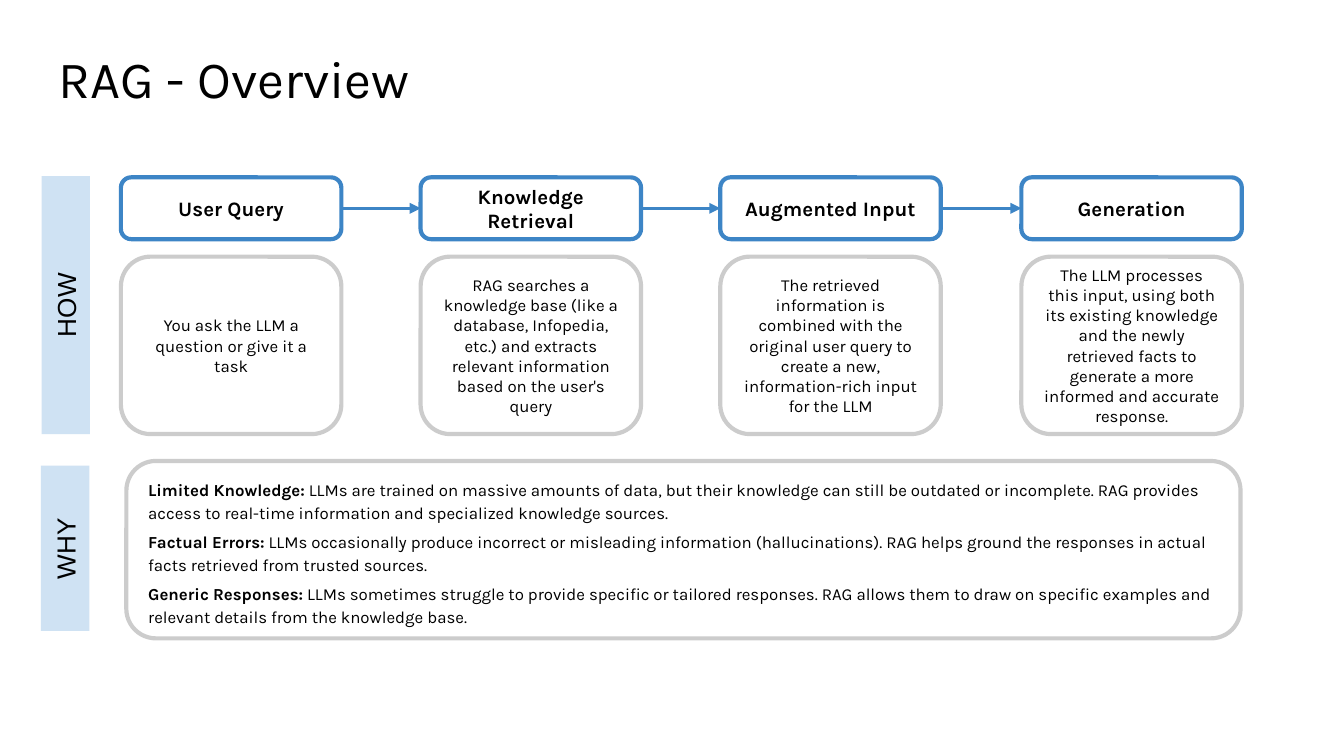
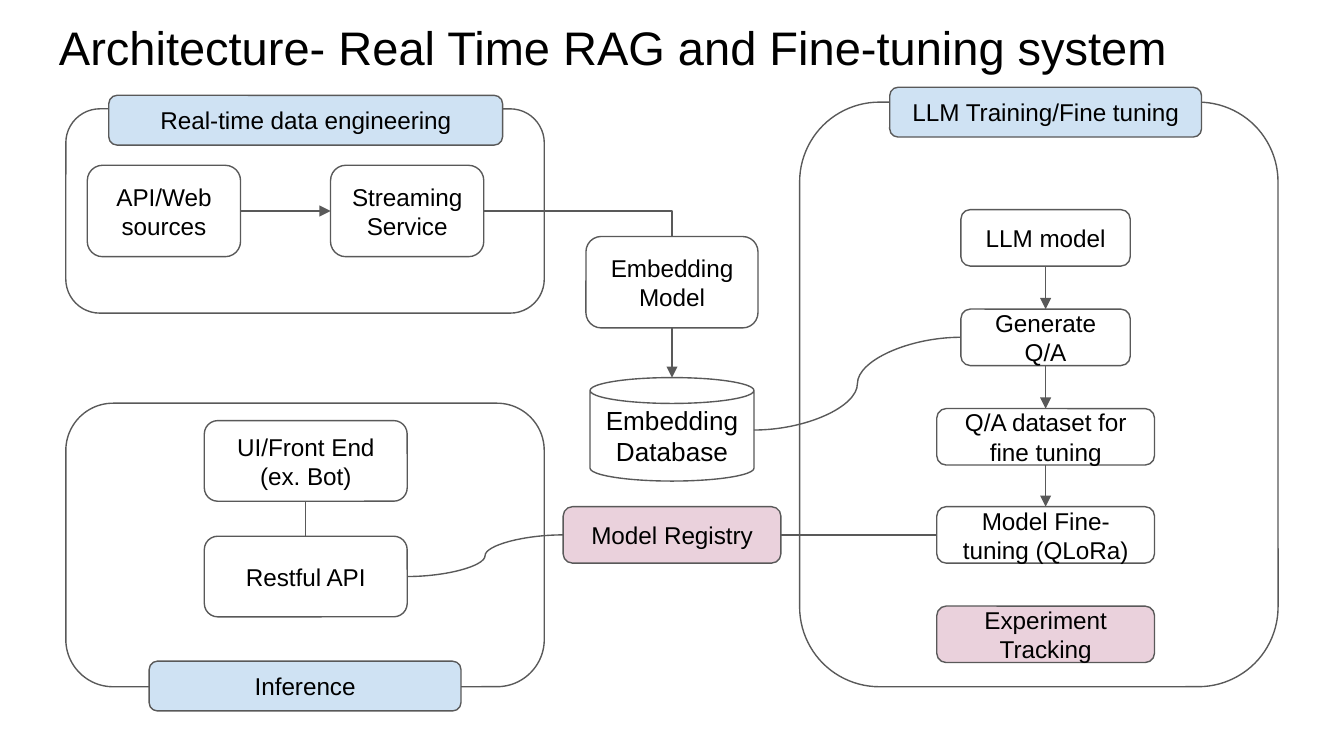
from dataclasses import dataclass
from typing import Any, Optional

from lxml.etree import SubElement
from pptx import Presentation
from pptx.dml.color import RGBColor
from pptx.enum.shapes import MSO_CONNECTOR as Route, MSO_SHAPE as Preset
from pptx.enum.text import MSO_ANCHOR as Anchor, PP_ALIGN as Align
from pptx.oxml.ns import qn
from pptx.util import Pt

EMU_PER_PX = 9144
TOP, LEFT, BOTTOM, RIGHT = range(4)


@dataclass(frozen=True)
class Theme:
    ink: str = "000000"
    band: str = "CFE2F3"
    accent: str = "3D85C6"
    border: str = "CCCCCC"
    edge: str = "595959"
    tool: str = "EAD1DC"
    plain_font: str = "Arial"
    brand_font: str = "Karla"
    title: float = 28
    long_title: float = 25.2
    label: float = 14
    node: float = 13
    heading: float = 11
    body: float = 9
    thick: float = 2.25
    medium: float = 1.5
    thin: float = 0.75
    inset: int = 10


THEME = Theme()


@dataclass(frozen=True)
class Look:
    size: float = THEME.node
    font: str = THEME.plain_font
    bold: bool = False
    fill: Optional[str] = None
    line: Optional[str] = THEME.edge
    width: float = THEME.thin


@dataclass(frozen=True)
class Box:
    text: str
    left: int
    top: int
    width: int
    height: int
    look: Look
    preset: Any = Preset.ROUNDED_RECTANGLE
    rotation: int = 0


@dataclass(frozen=True)
class Span:
    text: str
    bold: bool = False


@dataclass(frozen=True)
class Step:
    heading: str
    detail: str


BAND = Look(THEME.label, fill=THEME.band, line=None)
HEADING = Look(THEME.heading, THEME.brand_font, True, line=THEME.accent, width=THEME.thick)
DETAIL = Look(THEME.body, THEME.brand_font, line=THEME.border, width=THEME.thick)
NODE = Look()
STORE = Look(THEME.label)
TAG = Look(fill=THEME.band)
TOOL = Look(fill=THEME.tool)

STEPS = (
    Step("User Query", "You ask the LLM a question or give it a task"),
    Step("Knowledge Retrieval",
         "RAG searches a knowledge base (like a database, Infopedia, etc.) and extracts "
         "relevant information based on the user's query"),
    Step("Augmented Input",
         "The retrieved information is combined with the original user query to create a new, "
         "information-rich input for the LLM"),
    Step("Generation",
         "The LLM processes this input, using both its existing knowledge and the newly "
         "retrieved facts to generate a more informed and accurate response."),
)
REASONS = (
    (Span("Limited Knowledge:", True),
     Span(" LLMs are trained on massive amounts of data, but their knowledge can still be "
          "outdated or incomplete. RAG provides access to real-time information and "
          "specialized knowledge sources.")),
    (Span("Factual Errors:", True),
     Span(" LLMs occasionally produce incorrect or misleading information (hallucinations). "
          "RAG helps ground the responses in actual facts retrieved from trusted sources.")),
    (Span("Generic Responses:", True),
     Span(" LLMs sometimes struggle to provide specific or tailored responses. RAG allows "
          "them to draw on specific examples and relevant details from the knowledge base.")),
)


def px(*lengths: int) -> list[int]:
    """Turn px lengths into EMU."""
    return [length * EMU_PER_PX for length in lengths]


def apply_format(target: Any, values: dict[str, Any]) -> None:
    """Set every named attribute on the target."""
    for name, value in values.items():
        setattr(target, name, value)


def write(frame: Any, paragraphs: tuple, look: Look, anchor: Any, para_format: dict) -> None:
    """Fill a text frame with paragraphs of spans."""
    margins = {f"margin_{side}": px(THEME.inset)[0] for side in ("left", "top", "right", "bottom")}
    apply_format(frame, {"word_wrap": True, "vertical_anchor": anchor, **margins})
    for index, spans in enumerate(paragraphs):
        para = frame.add_paragraph() if index else frame.paragraphs[0]
        apply_format(para, para_format)
        for span in spans:
            run = para.add_run()
            run.text = span.text
            apply_format(run.font, {"name": look.font, "size": Pt(look.size), "bold": span.bold})
            run.font.color.rgb = RGBColor.from_string(THEME.ink)


def add_title(page: Any, text: str, top: int, height: int, look: Look, spacing: float) -> None:
    """Add the slide title."""
    box = page.shapes.add_textbox(*px(34, top, 932, height))
    write(box.text_frame, ((Span(text),),), look, Anchor.TOP, {"line_spacing": spacing})


def add_box(page: Any, box: Box) -> Any:
    """Draw a box with its centred text."""
    shape = page.shapes.add_shape(box.preset, *px(box.left, box.top, box.width, box.height))
    shape.shadow.inherit = False
    shape.rotation = box.rotation
    look = box.look
    if look.fill:
        shape.fill.solid()
        shape.fill.fore_color.rgb = RGBColor.from_string(look.fill)
    else:
        shape.fill.background()
    if look.line:
        shape.line.color.rgb = RGBColor.from_string(look.line)
        shape.line.width = Pt(look.width)
    else:
        shape.line.fill.background()
    if box.text:
        write(shape.text_frame, ((Span(box.text, look.bold),),), look, Anchor.MIDDLE,
              {"alignment": Align.CENTER})
    return shape


def add_link(page: Any, points: tuple = (0, 0, 0, 0), route: Any = Route.STRAIGHT,
             color: str = THEME.edge, width: float = THEME.thin, arrow: bool = False) -> Any:
    """Draw a connector, with an arrowhead if asked."""
    link = page.shapes.add_connector(route, *px(*points))
    link.line.color.rgb = RGBColor.from_string(color)
    link.line.width = Pt(width)
    properties = link._element.spPr
    if arrow:
        SubElement(properties.find(qn("a:ln")), qn("a:tailEnd"), type="triangle")
    SubElement(properties, qn("a:effectLst"))
    return link


def join(page: Any, start: Any, start_side: int, end: Any, end_side: int, **style: Any) -> None:
    """Join the sides of two boxes with a straight connector."""
    link = add_link(page, **style)
    link.begin_connect(start, start_side)
    link.end_connect(end, end_side)


def build_overview(page: Any) -> None:
    """Build the overview of how and why."""
    add_title(page, "RAG - Overview", 30, 63, Look(THEME.title, THEME.brand_font), 0.9)
    for text, left, top, length in (("HOW", -47, 209, 192), ("WHY", -13, 390, 123)):
        add_box(page, Box(text, left, top, length, 36, BAND, Preset.RECTANGLE, 270))

    headings = []
    for index, step in enumerate(STEPS):
        left = 90 + index * 670 // 3
        headings.append(add_box(page, Box(step.heading, left, 132, 164, 46, HEADING)))
        add_box(page, Box(step.detail, left, 191, 164, 132, DETAIL))
    for start, end in zip(headings, headings[1:]):
        join(page, start, RIGHT, end, LEFT, color=THEME.accent, width=THEME.medium, arrow=True)

    reasons = add_box(page, Box("", 94, 343, 829, 132, DETAIL))
    write(reasons.text_frame, REASONS, DETAIL, Anchor.MIDDLE,
          {"alignment": Align.LEFT, "line_spacing": 1.15, "space_before": Pt(3)})
    reasons.text_frame.margin_top = px(THEME.inset + 3)[0]


def build_architecture(page: Any) -> None:
    """Build the system architecture diagram."""
    title = "Architecture- Real Time RAG and Fine-tuning system"
    add_title(page, title, 4, 42, Look(THEME.long_title), 1.0)
    for left, top, height in ((49, 81, 152), (595, 76, 435), (49, 300, 211)):
        add_box(page, Box("", left, top, 356, height, NODE))
    for text, left, top, width in (("LLM Training/Fine tuning", 662, 65, 232),
                                   ("Real-time data engineering", 81, 71, 293),
                                   ("Inference", 111, 492, 232)):
        add_box(page, Box(text, left, top, width, 37, TAG))

    sources = add_box(page, Box("API/Web sources", 65, 123, 114, 68, NODE))
    streaming = add_box(page, Box("Streaming Service", 246, 123, 114, 68, NODE))
    embedding = add_box(page, Box("Embedding Model", 436, 176, 128, 68, NODE))
    add_box(page, Box("Embedding Database", 439, 281, 122, 77, STORE, Preset.CAN))
    front_end = add_box(page, Box("UI/Front End (ex. Bot)", 152, 313, 151, 60, NODE))
    service = add_box(page, Box("Restful API", 152, 399, 151, 60, NODE))

    stages = []
    for index, (text, width, look) in enumerate((
            ("LLM model", 126, NODE), ("Generate Q/A", 126, NODE),
            ("Q/A dataset for fine tuning", 162, NODE),
            ("Model Fine-tuning (QLoRa)", 162, NODE), ("Experiment Tracking", 162, TOOL))):
        top = 156 + round(index * 295 / 4)
        stages.append(add_box(page, Box(text, 778 - width // 2, top, width, 42, look)))
    training = stages[:4]
    registry = add_box(page, Box("Model Registry", 419, 377, 162, 42, TOOL))

    join(page, sources, RIGHT, streaming, LEFT, arrow=True)
    for start, end in zip(training, training[1:]):
        join(page, start, BOTTOM, end, TOP, arrow=True)
    join(page, training[-1], LEFT, registry, RIGHT)
    join(page, front_end, BOTTOM, service, TOP)
    store_link = add_link(page, (500, 244, 500, 281), arrow=True)
    store_link.begin_connect(embedding, BOTTOM)
    elbow = add_link(page, (360, 157, 500, 176), Route.ELBOW)
    elbow._element.spPr.find(qn("a:prstGeom")).set("prst", "bentConnector2")
    for points in ((419, 398, 303, 429), (561, 320, 715, 251)):
        add_link(page, points, Route.CURVE)


def main() -> None:
    """Build and save the deck."""
    deck = Presentation()
    deck.slide_width = px(1000)[0]
    deck.slide_height = deck.slide_width * 9 // 16
    for build in (build_overview, build_architecture):
        build(deck.slides.add_slide(deck.slide_layouts[6]))
    deck.save("out.pptx")


if __name__ == "__main__":
    main()
